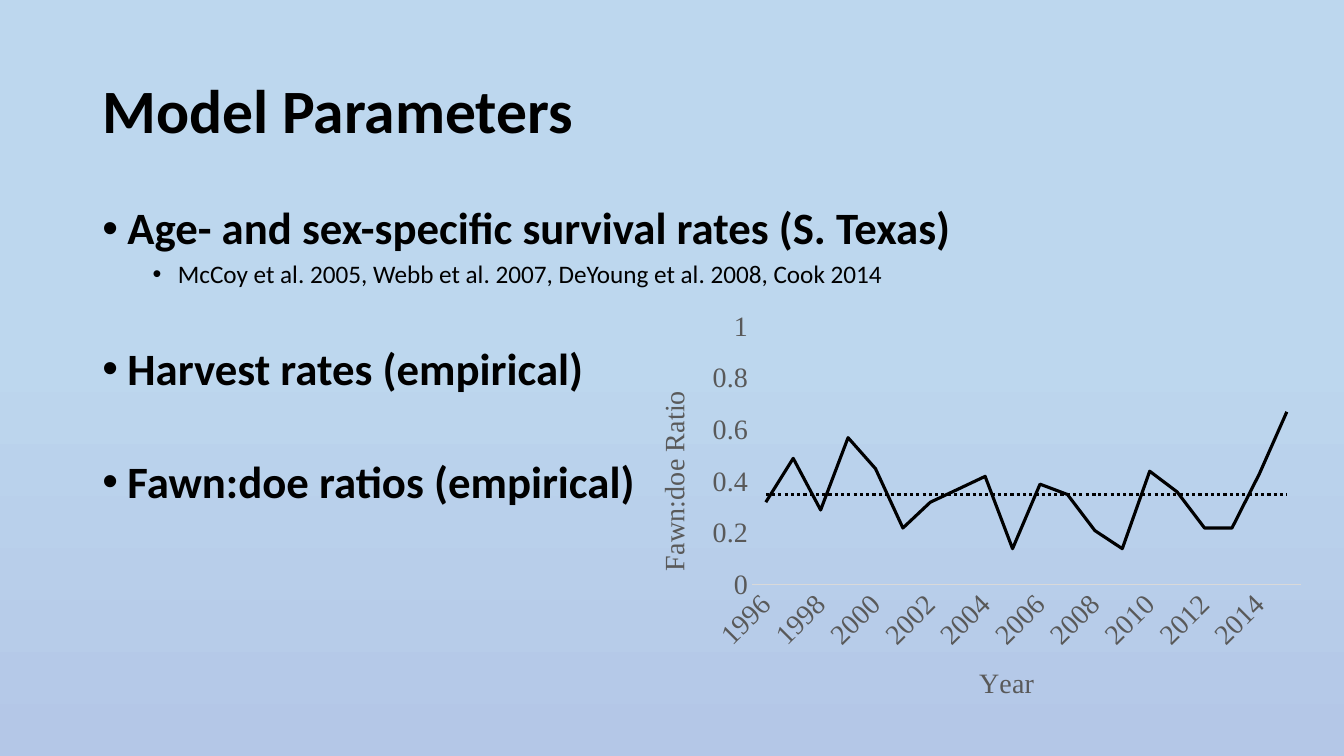
import pptx
import pptx.chart.data
import pptx.dml.color
import pptx.enum.chart
import pptx.enum.dml
import pptx.enum.text
import pptx.oxml
import pptx.oxml.ns
import pptx.util

Pt = pptx.util.Pt
RGBColor = pptx.dml.color.RGBColor
BLACK = RGBColor(0x00, 0x00, 0x00)
GRAY = RGBColor(0x59, 0x59, 0x59)
PALE_GRAY = RGBColor(0xD9, 0xD9, 0xD9)
PERIWINKLE = RGBColor(0xB4, 0xC7, 0xE7)
SKY = RGBColor(0xBD, 0xD7, 0xEE)
BODY_FONT = "Calibri"
CHART_FONT = "Times New Roman"

TITLE = "Model Parameters"
BULLETS = [
    ("Age- and sex-specific survival rates (S. Texas)", 0, 0),
    ("McCoy et al. 2005, Webb et al. 2007, DeYoung et al. 2008, Cook 2014", 1, 5),
    ("Harvest rates (empirical)", 0, 41.4),
    ("Fawn:doe ratios (empirical)", 0, 45.8),
]
LEVELS = [
    {"indent": 18, "size": 32, "bold": True},
    {"indent": 54, "size": 18, "bold": False},
]
FIRST_YEAR = 1996
RATIOS = [0.32, 0.49, 0.29, 0.57, 0.45, 0.22, 0.32, 0.37, 0.42, 0.14,
          0.39, 0.35, 0.21, 0.14, 0.44, 0.36, 0.22, 0.22, 0.43, 0.67]
MEAN_RATIO = 0.35


def set_font(font, name, size, color, bold=False):
    font.name = name
    font.size = Pt(size)
    font.bold = bold
    font.color.rgb = color


def add_text(page, left, top, width, height, anchor):
    box = page.shapes.add_textbox(Pt(left), Pt(top), Pt(width), Pt(height))
    frame = box.text_frame
    frame.word_wrap = True
    frame.vertical_anchor = anchor
    return frame


def add_bullet(para, indent):
    properties = para._p.get_or_add_pPr()
    properties.set("marL", str(Pt(indent)))
    properties.set("indent", str(-Pt(18)))
    namespace = pptx.oxml.ns.nsdecls("a")
    for markup in ('<a:buFont %s typeface="Arial"/>', '<a:buChar %s char="•"/>'):
        properties.append(pptx.oxml.parse_xml(markup % namespace))


def style_axis(axis, title, title_turn):
    axis.has_major_gridlines = False
    axis.major_tick_mark = pptx.enum.chart.XL_TICK_MARK.NONE
    axis.minor_tick_mark = pptx.enum.chart.XL_TICK_MARK.NONE
    set_font(axis.tick_labels.font, CHART_FONT, 20, GRAY)
    frame = axis.axis_title.text_frame
    frame.text = title
    frame._txBody.bodyPr.set("rot", str(title_turn * 60000))
    set_font(frame.paragraphs[0].runs[0].font, CHART_FONT, 20, GRAY)


def add_ratio_chart(page):
    data = pptx.chart.data.CategoryChartData()
    data.categories = [str(FIRST_YEAR + step) for step in range(len(RATIOS))]
    data.add_series("Series 1", RATIOS)
    data.add_series("Series 2", [MEAN_RATIO] * len(RATIOS))
    chart = page.shapes.add_chart(
        pptx.enum.chart.XL_CHART_TYPE.LINE,
        Pt(452), Pt(216), Pt(486.7), Pt(301.7), data).chart
    chart.has_title = False
    chart.has_legend = False
    set_font(chart.font, CHART_FONT, 20, BLACK)
    chart.plots[0].vary_by_categories = False

    for series in chart.plots[0].series:
        series.smooth = False
        series.marker.style = pptx.enum.chart.XL_MARKER_STYLE.NONE
        series.format.line.color.rgb = BLACK
        series.format.line.width = Pt(2.25)
    series.format.line.dash_style = pptx.enum.dml.MSO_LINE.ROUND_DOT

    years = chart.category_axis
    style_axis(years, "Year", 0)
    years.format.line.color.rgb = PALE_GRAY
    years.format.line.width = Pt(0.75)
    years._element.txPr.bodyPr.set("rot", str(-45 * 60000))

    values = chart.value_axis
    style_axis(values, "Fawn:doe Ratio", -90)
    values.minimum_scale = 0
    values.maximum_scale = 1
    values.major_unit = 0.2
    values.format.line.fill.background()


def main():
    deck = pptx.Presentation()
    deck.slide_width = Pt(960)
    deck.slide_height = Pt(540)
    page = deck.slides.add_slide(deck.slide_layouts[6])

    fill = page.background.fill
    fill.gradient()
    fill.gradient_angle = 90
    for stop, color, position in zip(fill.gradient_stops, (PERIWINKLE, SKY), (0, 0.55)):
        stop.color.rgb = color
        stop.position = position

    anchors = pptx.enum.text.MSO_ANCHOR
    frame = add_text(page, 66, 28.8, 828, 104.4, anchors.MIDDLE)
    frame.text = TITLE
    frame.paragraphs[0].line_spacing = 0.9
    set_font(frame.paragraphs[0].runs[0].font, BODY_FONT, 44, BLACK, True)

    frame = add_text(page, 66, 143.8, 828, 342.6, anchors.TOP)
    frame.text = "\n".join(text for text, level, gap in BULLETS)
    for para, (text, level, gap) in zip(frame.paragraphs, BULLETS):
        style = LEVELS[level]
        para.level = level
        para.line_spacing = 0.9
        para.space_before = Pt(gap)
        add_bullet(para, style["indent"])
        set_font(para.runs[0].font, BODY_FONT, style["size"], BLACK, style["bold"])

    add_ratio_chart(page)
    deck.save("out.pptx")


if __name__ == "__main__":
    main()
